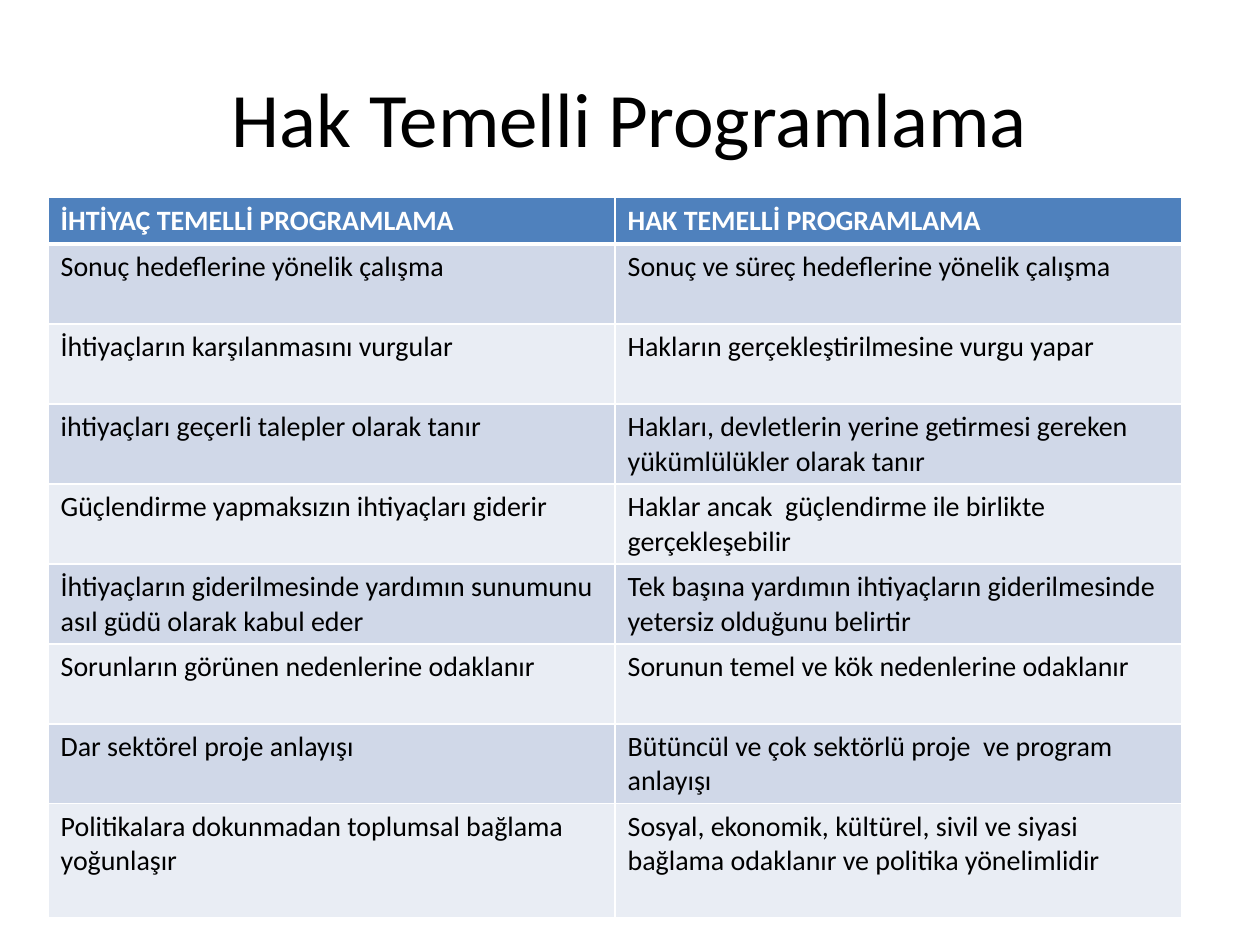
from dataclasses import dataclass

from lxml import etree
from pptx import Presentation
from pptx.dml.color import RGBColor
from pptx.enum.text import MSO_ANCHOR, PP_ALIGN
from pptx.oxml.ns import qn
from pptx.util import Pt

MIDDLE = MSO_ANCHOR.MIDDLE
CENTER = PP_ALIGN.CENTER
BLANK_LAYOUT = 6


@dataclass(frozen=True)
class Theme:
    font: str = "Calibri"
    title_size: int = 44
    table_size: int = 16
    ink: str = "000000"
    header_ink: str = "FFFFFF"
    header_fill: str = "4F81BD"
    bands: tuple = ("D0D8E8", "E9EDF4")
    rule: str = "FFFFFF"
    thin_rule: int = 1
    thick_rule: int = 3


THEME = Theme()

TITLE = "Hak Temelli Programlama"
HEADINGS = ("İHTİYAÇ TEMELLİ PROGRAMLAMA", "HAK TEMELLİ PROGRAMLAMA")
COMPARISONS = (
    ("Sonuç hedeflerine yönelik çalışma",
     "Sonuç ve süreç hedeflerine yönelik çalışma"),
    ("İhtiyaçların karşılanmasını vurgular",
     "Hakların gerçekleştirilmesine vurgu yapar"),
    ("ihtiyaçları geçerli talepler olarak tanır",
     "Hakları, devletlerin yerine getirmesi gereken yükümlülükler olarak tanır"),
    ("Güçlendirme yapmaksızın ihtiyaçları giderir",
     "Haklar ancak  güçlendirme ile birlikte gerçekleşebilir"),
    ("İhtiyaçların giderilmesinde yardımın sunumunu asıl güdü olarak kabul eder",
     "Tek başına yardımın ihtiyaçların giderilmesinde yetersiz olduğunu belirtir"),
    ("Sorunların görünen nedenlerine odaklanır",
     "Sorunun temel ve kök nedenlerine odaklanır"),
    ("Dar sektörel proje anlayışı",
     "Bütüncül ve çok sektörlü proje  ve program anlayışı"),
    ("Politikalara dokunmadan toplumsal bağlama yoğunlaşır",
     "Sosyal, ekonomik, kültürel, sivil ve siyasi bağlama odaklanır ve politika yönelimlidir"),
)

TITLE_BOX = (36, 21.6, 648, 90)
TABLE_BOX = (27.5, 113, 648, 410.5)
HEADER_HEIGHT = 25.4
ROW_HEIGHT = 45.7


def write(text_frame, text, size, color, bold=False):
    text_frame.text = text
    font = text_frame.paragraphs[0].runs[0].font
    font.name = THEME.font
    font.size = Pt(size)
    font.bold = bold
    font.color.rgb = RGBColor.from_string(color)


def rule_cell(cell, top, bottom):
    properties = cell._tc.get_or_add_tcPr()
    thin = THEME.thin_rule
    for side, width in (("L", thin), ("R", thin), ("T", top), ("B", bottom)):
        line = etree.SubElement(properties, qn(f"a:ln{side}"), w=str(Pt(width)))
        fill = etree.SubElement(line, qn("a:solidFill"))
        etree.SubElement(fill, qn("a:srgbClr"), val=THEME.rule)


def add_title(slide, box):
    title = slide.shapes.add_textbox(*map(Pt, box))
    frame = title.text_frame
    frame.word_wrap = True
    frame.vertical_anchor = MIDDLE
    write(frame, TITLE, THEME.title_size, THEME.ink)
    frame.paragraphs[0].alignment = CENTER


def add_comparison(slide, box):
    rows = (HEADINGS, *COMPARISONS)
    table = slide.shapes.add_table(len(rows), len(HEADINGS), *map(Pt, box)).table
    for column in table.columns:
        column.width = Pt(box[2] / len(HEADINGS))

    middle_heights = [ROW_HEIGHT] * (len(rows) - 2)
    last_height = box[3] - HEADER_HEIGHT - sum(middle_heights)
    heights = [HEADER_HEIGHT, *middle_heights, last_height]

    for index, (texts, height) in enumerate(zip(rows, heights)):
        table.rows[index].height = Pt(height)
        is_header = index == 0
        fill = THEME.header_fill if is_header else THEME.bands[(index - 1) % 2]
        ink = THEME.header_ink if is_header else THEME.ink
        top = THEME.thick_rule if index == 1 else THEME.thin_rule
        bottom = THEME.thick_rule if is_header else THEME.thin_rule
        for cell, text in zip(table.rows[index].cells, texts):
            write(cell.text_frame, text, THEME.table_size, ink, is_header)
            rule_cell(cell, top, bottom)
            cell.fill.solid()
            cell.fill.fore_color.rgb = RGBColor.from_string(fill)


def main():
    presentation = Presentation()
    presentation.slide_width = Pt(720)
    presentation.slide_height = Pt(540)
    slide = presentation.slides.add_slide(presentation.slide_layouts[BLANK_LAYOUT])
    add_title(slide, TITLE_BOX)
    add_comparison(slide, TABLE_BOX)
    presentation.save("out.pptx")


if __name__ == "__main__":
    main()
